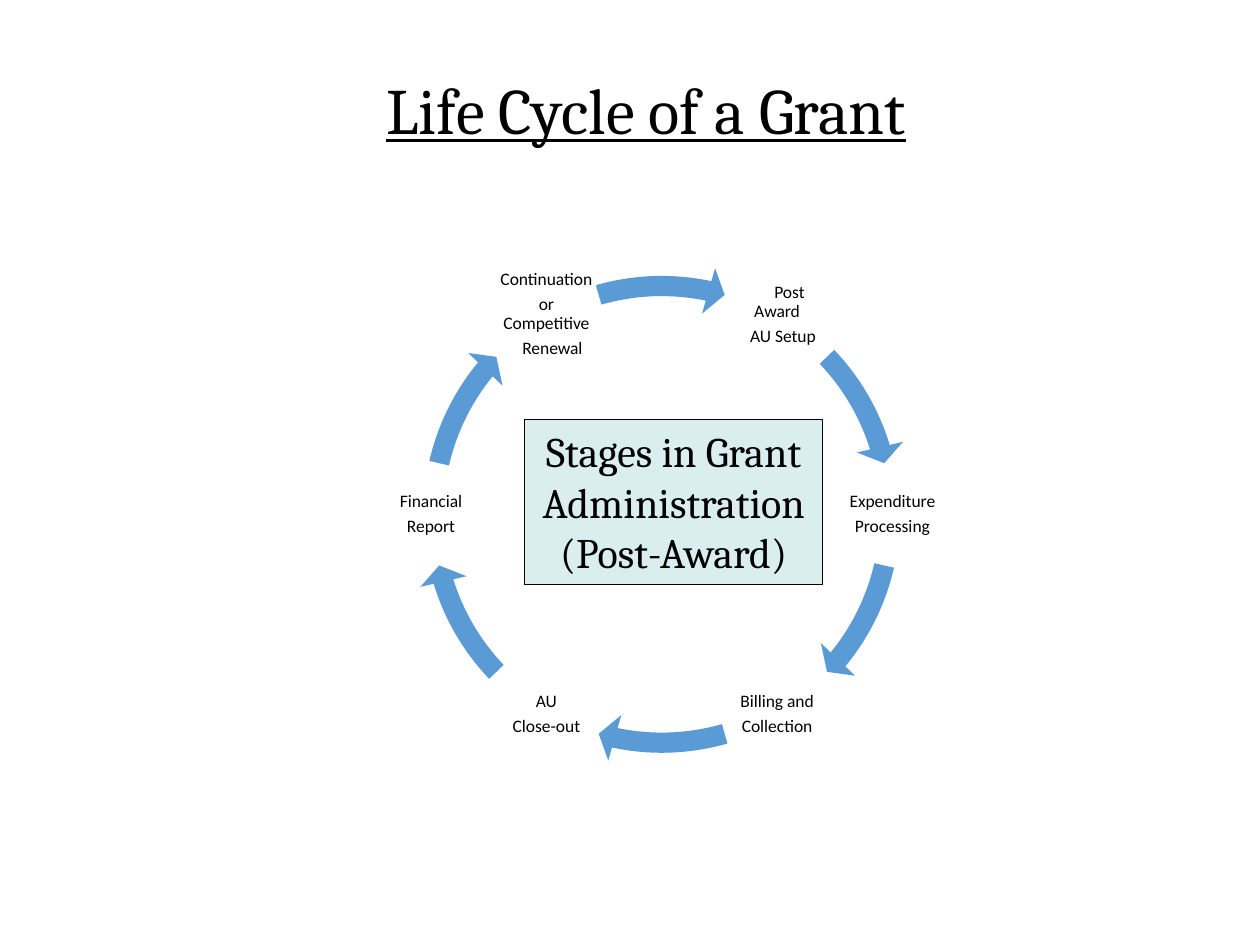
"""Build the grant life cycle slide."""
from dataclasses import dataclass
from math import cos, radians, sin

from pptx import Presentation
from pptx.dml.color import RGBColor
from pptx.enum import shapes, text
from pptx.slide import Slide
from pptx.util import Cm, Pt

BLACK = RGBColor(0x00, 0x00, 0x00)
ARROW_BLUE = RGBColor(0x5B, 0x9B, 0xD5)
PALE_TEAL = RGBColor(0xDA, 0xED, 0xEF)
CENTER_X, CENTER_Y = 13.34, 10.37
LABEL_RADIUS, LABEL_SIZE, RING_SIZE = 4.65, 2.08, 10.16


@dataclass
class Line:
    wording: str
    indent: float = 0


@dataclass
class Stage:
    angle: float
    lines: list[Line]


@dataclass
class Arrow:
    start: float
    end: float


STAGES = [
    Stage(-60, [Line("Post Award", 0.5), Line("AU Setup", 0.24)]),
    Stage(0, [Line("Expenditure"), Line("Processing")]),
    Stage(60, [Line("Billing and"), Line("Collection")]),
    Stage(120, [Line("AU"), Line("Close-out")]),
    Stage(180, [Line("Financial"), Line("Report")]),
    Stage(240, [Line("Continuation"), Line("or Competitive"), Line("Renewal", 0.24)]),
]
HALF_RING = [Arrow(316.38, 342.89), Arrow(12.94, 39.44), Arrow(73.98, 101.85)]
ARROWS = [
    Arrow((arrow.start + turn) % 360, (arrow.end + turn) % 360)
    for turn in (0, 180)
    for arrow in HALF_RING
]


def style_paragraph(paragraph, font_name: str, size: float) -> None:
    paragraph.alignment = text.PP_ALIGN.CENTER
    paragraph.font.name = font_name
    paragraph.font.size = Pt(size)
    paragraph.font.color.rgb = BLACK


def add_title(slide: Slide) -> None:
    title = slide.shapes.title
    title.left, title.top, title.width, title.height = Cm(0.64), Cm(1.27), Cm(24.77), Cm(1.83)
    frame = title.text_frame
    frame.text = "Life Cycle of a Grant"
    frame.vertical_anchor = text.MSO_ANCHOR.TOP
    frame.auto_size = text.MSO_AUTO_SIZE.SHAPE_TO_FIT_TEXT
    style_paragraph(frame.paragraphs[0], "Cambria", 37)
    frame.paragraphs[0].font.underline = True


def add_stage(slide: Slide, stage: Stage) -> None:
    left = CENTER_X + LABEL_RADIUS * cos(radians(stage.angle)) - LABEL_SIZE / 2
    top = CENTER_Y + LABEL_RADIUS * sin(radians(stage.angle)) - LABEL_SIZE / 2
    label = slide.shapes.add_textbox(Cm(left), Cm(top), Cm(LABEL_SIZE), Cm(LABEL_SIZE))
    frame = label.text_frame
    frame.word_wrap = True
    frame.vertical_anchor = text.MSO_ANCHOR.MIDDLE
    frame.margin_left = frame.margin_right = Cm(0.03)
    frame.margin_top = frame.margin_bottom = Cm(0.03)
    frame.text = "\n".join(line.wording for line in stage.lines)
    for paragraph, line in zip(frame.paragraphs, stage.lines):
        style_paragraph(paragraph, "Calibri", 10)
        paragraph.line_spacing = 0.9
        paragraph.space_after = Pt(3.5)
        if line.indent:
            paragraph._p.get_or_add_pPr().set("indent", str(Cm(line.indent)))


def add_arrow(slide: Slide, arrow: Arrow) -> None:
    shape = slide.shapes.add_shape(
        shapes.MSO_SHAPE.CIRCULAR_ARROW,
        Cm(CENTER_X - RING_SIZE / 2), Cm(CENTER_Y - RING_SIZE / 2), Cm(RING_SIZE), Cm(RING_SIZE),
    )
    values = (0.04, 2.5, arrow.end * 0.6, arrow.start * 0.6, 0.047)
    for index, value in enumerate(values):
        shape.adjustments[index] = value
    shape.shadow.inherit = False
    shape.fill.solid()
    shape.fill.fore_color.rgb = ARROW_BLUE
    shape.line.fill.background()


def add_center_box(slide: Slide) -> None:
    box = slide.shapes.add_shape(
        shapes.MSO_SHAPE.RECTANGLE, Cm(10.58), Cm(8.46), Cm(6), Cm(3.33)
    )
    box.shadow.inherit = False
    box.fill.solid()
    box.fill.fore_color.rgb = PALE_TEAL
    box.line.color.rgb = BLACK
    box.line.width = Pt(0.75)
    frame = box.text_frame
    frame.text = "Stages in Grant Administration (Post-Award)"
    frame.word_wrap = True
    frame.vertical_anchor = text.MSO_ANCHOR.TOP
    frame.auto_size = text.MSO_AUTO_SIZE.SHAPE_TO_FIT_TEXT
    style_paragraph(frame.paragraphs[0], "Cambria", 24)


def main() -> None:
    presentation = Presentation()
    presentation.slide_width, presentation.slide_height = Cm(25.4), Cm(19.05)
    slide = presentation.slides.add_slide(presentation.slide_layouts[5])
    add_title(slide)
    for stage, arrow in zip(STAGES, ARROWS):
        add_stage(slide, stage)
        add_arrow(slide, arrow)
    add_center_box(slide)
    presentation.save("out.pptx")


if __name__ == "__main__":
    main()
